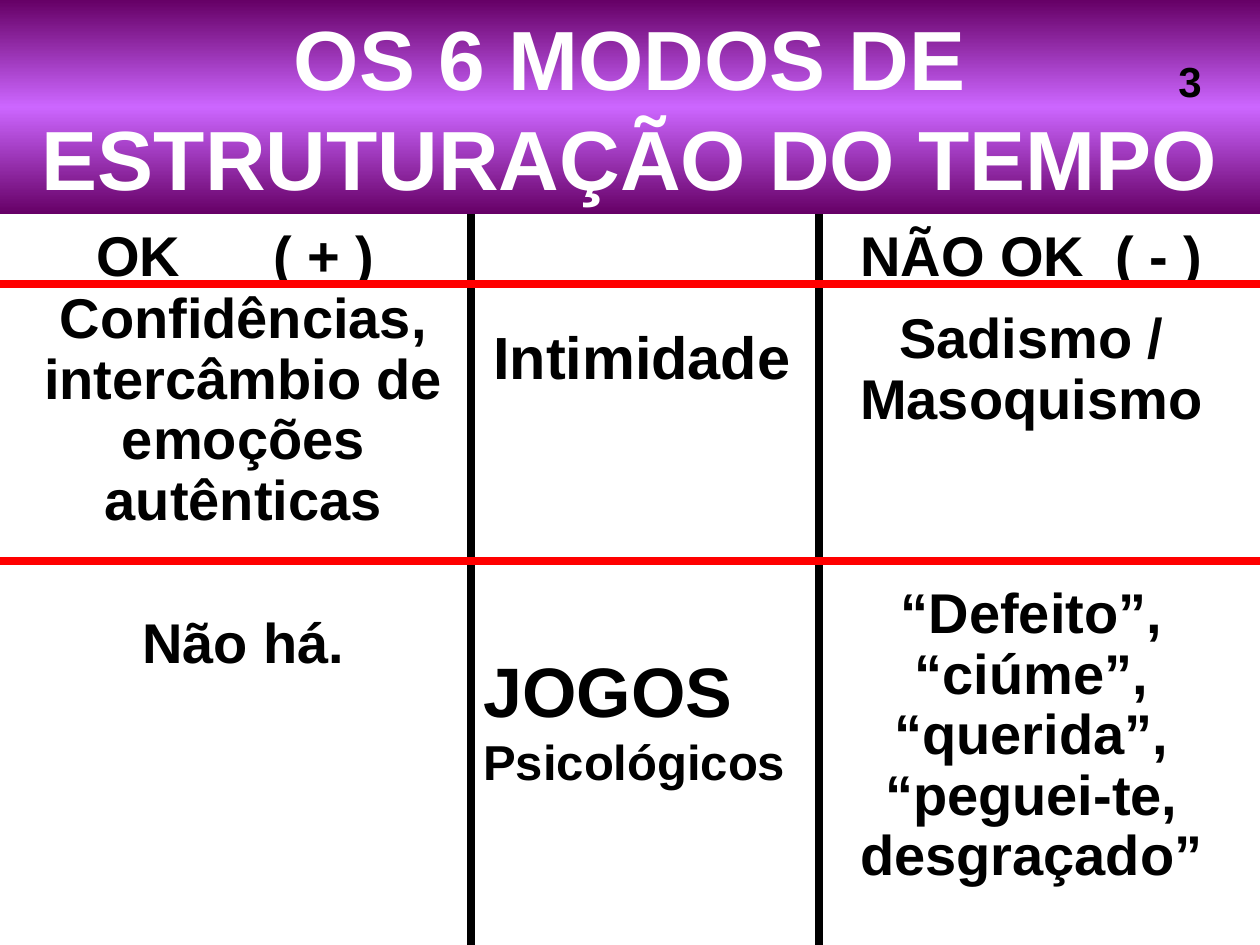
from copy import deepcopy

from lxml.etree import SubElement
from pptx import Presentation
from pptx.dml.color import RGBColor
from pptx.enum.shapes import MSO_CONNECTOR
from pptx.enum.text import MSO_ANCHOR, MSO_AUTO_SIZE, PP_ALIGN
from pptx.oxml.ns import qn
from pptx.util import Emu, Pt

EMU_PER_PX = 914400 / 126
WIDTH, HEIGHT = 1260, 945
COLORS = {
    "edge": "660066",
    "glow": "CC66FF",
    "paper": "FFFFFF",
    "ink": "000000",
    "row": "FF0000",
}
BANNER_BOTTOM = 214
COLUMN_LINES = (471, 819)
ROW_LINES = (284, 561)


def px(length):
    return Emu(round(length * EMU_PER_PX))


def rgb(name):
    return RGBColor.from_string(COLORS[name])


class TimeSlide:
    """Holds the style and the current slide."""

    font_name = "Arial"
    line_width = Pt(4.5)

    def __init__(self, slide):
        self.slide = slide

    def style(self, font, size, color="ink"):
        font.name, font.size, font.bold = self.font_name, Pt(size), True
        font.color.rgb = rgb(color)

    def place(self, shape, box):
        shape.left, shape.top, shape.width, shape.height = map(px, box)
        frame = shape.text_frame
        frame.word_wrap = True
        frame.auto_size = MSO_AUTO_SIZE.NONE
        return frame

    def title(self, text, box):
        banner = self.slide.shapes.title
        frame = self.place(banner, box)
        frame.vertical_anchor = MSO_ANCHOR.MIDDLE
        heading = frame.paragraphs[0]
        heading.text, heading.alignment = text, PP_ALIGN.CENTER
        self.style(heading.font, 48, "paper")

        banner.fill.gradient()
        stops = banner._element.spPr.find(".//" + qn("a:gsLst"))
        stops.insert(1, deepcopy(stops[0]))
        shades = ((0, "edge"), (0.5, "glow"), (1, "edge"))
        for stop, (position, shade) in zip(banner.fill.gradient_stops, shades):
            stop.position, stop.color.rgb = position, rgb(shade)
        banner.fill.gradient_angle = 90

    def column(self, index, entries, gap, box):
        """Fill a body placeholder, with gap points between its entries."""
        body = self.slide.placeholders[index]
        body.fill.solid()
        body.fill.fore_color.rgb = rgb("paper")
        frame = self.place(body, box)
        for number, text in enumerate(entries):
            entry = frame.add_paragraph() if number else frame.paragraphs[0]
            entry.text, entry.alignment = text, PP_ALIGN.CENTER
            entry.line_spacing = 0.9
            if number:
                entry.space_before = Pt(gap)
            self.style(entry.font, 32)
            properties = entry._p.get_or_add_pPr()
            properties.set("marL", "0")
            properties.set("indent", "0")
            properties.insert_element_before(
                properties.makeelement(qn("a:buNone")), "a:tabLst", "a:defRPr")

    def label(self, runs, box, tab=None):
        """Add a text box of (text, size) runs, with a tab stop if given."""
        frame = self.place(self.slide.shapes.add_textbox(0, 0, 0, 0), box)
        line = frame.paragraphs[0]
        if tab:
            tabs = SubElement(line._p.get_or_add_pPr(), qn("a:tabLst"))
            SubElement(tabs, qn("a:tab"), pos=str(px(tab)), algn="l")
        for text, size in runs:
            run = line.add_run()
            run.text = text
            self.style(run.font, size)

    def rule(self, start, end, color):
        line = self.slide.shapes.add_connector(
            MSO_CONNECTOR.STRAIGHT, *map(px, start + end))
        line.line.color.rgb = rgb(color)
        line.line.width = self.line_width
        SubElement(line._element.spPr, qn("a:effectLst"))


def main():
    deck = Presentation()
    deck.slide_width, deck.slide_height = px(WIDTH), px(HEIGHT)
    page = TimeSlide(deck.slides.add_slide(deck.slide_layouts[3]))

    page.title("OS 6 MODOS DE ESTRUTURAÇÃO DO TEMPO",
               (0, 0, WIDTH, BANNER_BOTTOM))
    page.column(1, ("Confidências, intercâmbio de emoções autênticas",
                    "Não há."), 47, (25, 284, 437, 625))
    page.column(2, ("Sadismo / Masoquismo",
                    "“Defeito”, “ciúme”, “querida”, “peguei-te, desgraçado”"),
                88, (838, 304, 387, 615))

    page.label([("JOGOS ", 40), ("Psicológicos", 28)], (471, 641, 338, 285))
    page.label([("OK\t( + )", 32)], (84, 214, 348, 81), tab=177)
    page.label([("Intimidade", 34)], (481, 314, 326, 199))
    page.label([("NÃO OK\t( - )", 32)], (848, 214, 382, 81), tab=255)
    page.label([("3", 24)], (1166, 49, 59, 63))

    for x in COLUMN_LINES:
        page.rule((x, BANNER_BOTTOM), (x, HEIGHT), "ink")
    for y in ROW_LINES:
        page.rule((0, y), (WIDTH, y), "row")

    deck.save("out.pptx")


if __name__ == "__main__":
    main()
